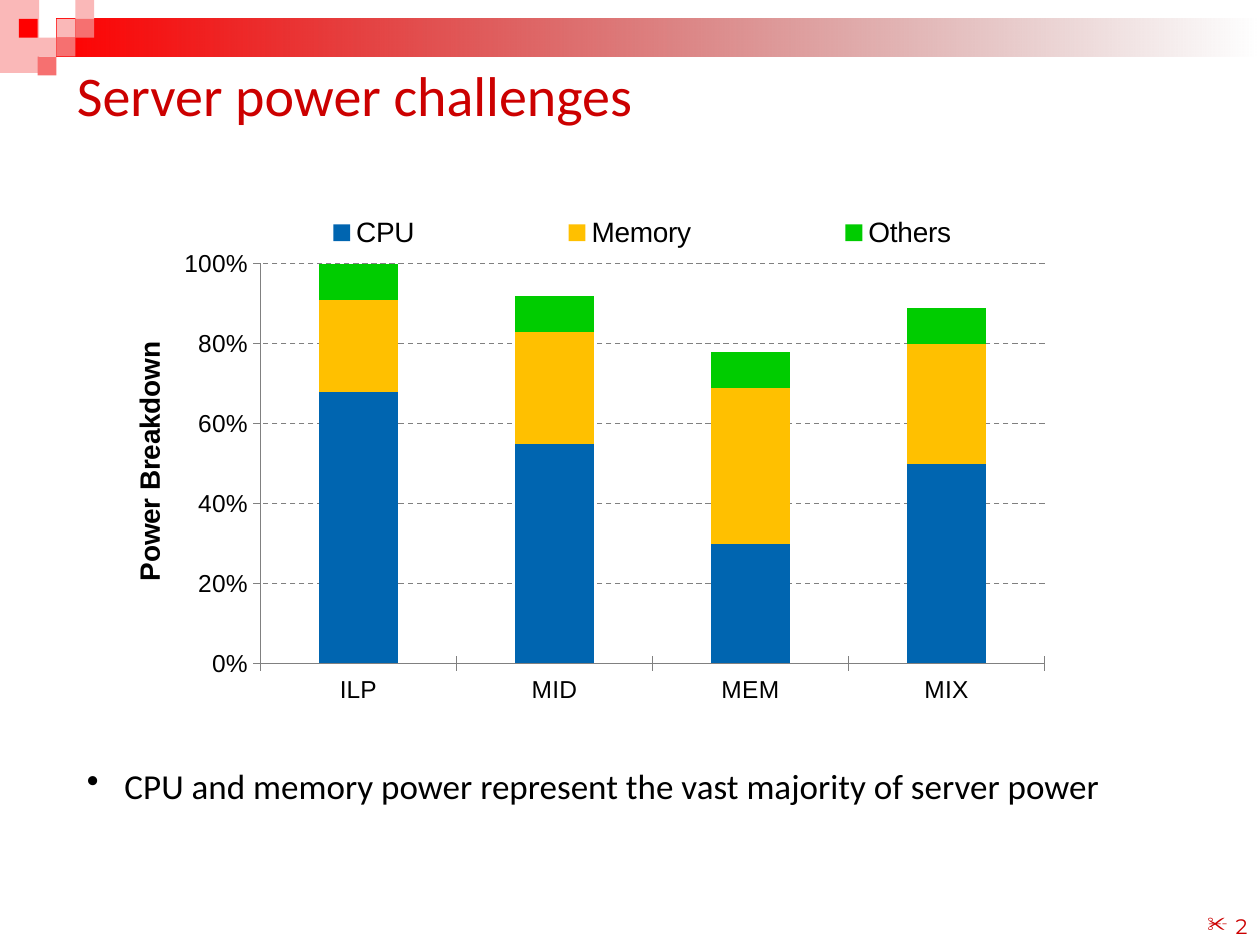
from lxml.etree import SubElement
from pptx import Presentation
from pptx.chart.data import CategoryChartData
from pptx.dml.color import RGBColor
from pptx.enum.chart import XL_CHART_TYPE, XL_LEGEND_POSITION, XL_TICK_MARK
from pptx.enum.dml import MSO_LINE
from pptx.enum.shapes import MSO_SHAPE
from pptx.enum.text import MSO_ANCHOR, PP_ALIGN
from pptx.oxml import parse_xml
from pptx.oxml.ns import nsdecls, qn
from pptx.util import Cm, Pt

RED = RGBColor(0xFF, 0x00, 0x00)
DARK_RED = RGBColor(0x76, 0x00, 0x00)
TITLE_RED = RGBColor(0xCC, 0x00, 0x00)
PINK = RGBColor(0xFA, 0xB8, 0xB8)
CORAL = RGBColor(0xF6, 0x70, 0x70)
BLACK = RGBColor(0x00, 0x00, 0x00)
GRAY = RGBColor(0x80, 0x80, 0x80)
BLUE = RGBColor(0x00, 0x65, 0xB0)
AMBER = RGBColor(0xFF, 0xC0, 0x00)
GREEN = RGBColor(0x00, 0xCC, 0x00)

TILE = 0.38
TILES = [
    (3, 1, PINK), (4, 0, PINK), (4, 1, CORAL), (2, 2, PINK),
    (1, 1, RED), (3, 2, CORAL), (2, 3, CORAL),
]
CATEGORIES = ["ILP", "MID", "MEM", "MIX"]
SERIES = [
    ("CPU", (0.68, 0.55, 0.3, 0.5), BLUE),
    ("Memory", (0.23, 0.28, 0.39, 0.3), AMBER),
    ("Others", (0.09, 0.09, 0.09, 0.09), GREEN),
]


def set_layout(owner, inner=False, **places):
    for old in owner.findall(qn("c:layout")):
        owner.remove(old)
    layout = parse_xml(f"<c:layout {nsdecls('c')}/>")
    manual = SubElement(layout, qn("c:manualLayout"))
    if inner:
        SubElement(manual, qn("c:layoutTarget")).set("val", "inner")
    for side in ("x", "y"):
        SubElement(manual, qn(f"c:{side}Mode")).set("val", "edge")
    for name, value in places.items():
        SubElement(manual, qn(f"c:{name}")).set("val", str(value))
    before = [owner.find(qn(tag)) for tag in ("c:legendPos", "c:tx")]
    anchor = next((item for item in before if item is not None), None)
    if anchor is None:
        owner.insert(0, layout)
    else:
        anchor.addnext(layout)


class SlideBuilder:
    def __init__(self, page):
        self.page = page
        self.text_font = "Calibri"
        self.chart_font = "Arial"

    def block(self, left, top, width, height, color):
        shape = self.page.shapes.add_shape(
            MSO_SHAPE.RECTANGLE, Cm(left), Cm(top), Cm(width), Cm(height))
        shape.shadow.inherit = False
        shape.line.fill.background()
        shape.fill.solid()
        shape.fill.fore_color.rgb = color
        return shape

    def fading_bar(self, left, top, width, height, start, end):
        fill = self.block(left, top, width, height, start).fill
        fill.gradient()
        fill.gradient_angle = 0
        for stop, color, position in zip(fill.gradient_stops, (start, end), (0, 1)):
            stop.color.rgb = color
            stop.position = position
        last_color = self.page.shapes[-1].element.spPr.findall(".//" + qn("a:srgbClr"))[-1]
        SubElement(last_color, qn("a:alpha")).set("val", "0")

    def text(self, left, top, width, height, words, size, color, font=None,
             anchor=MSO_ANCHOR.TOP, align=PP_ALIGN.LEFT, bullet=None,
             indent=0, spacing=None):
        box = self.page.shapes.add_textbox(Cm(left), Cm(top), Cm(width), Cm(height))
        frame = box.text_frame
        frame.word_wrap = True
        frame.vertical_anchor = anchor
        para = frame.paragraphs[0]
        para.text = words
        para.alignment = align
        if spacing:
            para.line_spacing = spacing
        if bullet:
            properties = para._p.get_or_add_pPr()
            properties.set("marL", str(Cm(indent)))
            properties.set("indent", str(-Cm(indent)))
            SubElement(properties, qn("a:buChar")).set("char", bullet)
        para.font.name = font or self.text_font
        para.font.size = Pt(size)
        para.font.color.rgb = color

    def style_font(self, font, size):
        font.name = self.chart_font
        font.size = Pt(size)
        font.color.rgb = BLACK

    def stacked_chart(self, left, top, width, height, axis_title):
        data = CategoryChartData(number_format="0%")
        data.categories = CATEGORIES
        for name, values, _ in SERIES:
            data.add_series(name, values)
        chart = self.page.shapes.add_chart(
            XL_CHART_TYPE.COLUMN_STACKED, Cm(left), Cm(top), Cm(width),
            Cm(height), data).chart
        self.style_font(chart.font, 10)
        chart.has_title = False
        plot = chart.plots[0]
        plot.gap_width = 150
        plot.overlap = 100
        plot.vary_by_categories = False
        for series, (_, _, color) in zip(plot.series, SERIES):
            series.format.fill.solid()
            series.format.fill.fore_color.rgb = color

        values = chart.value_axis
        values.minimum_scale = 0
        values.maximum_scale = 1
        values.major_unit = 0.2
        values.major_tick_mark = XL_TICK_MARK.OUTSIDE
        values.tick_labels.number_format = "0%"
        values.tick_labels.number_format_is_linked = False
        grid = values.major_gridlines.format.line
        grid.color.rgb = GRAY
        grid.width = Pt(0.75)
        grid.dash_style = MSO_LINE.DASH
        title = values.axis_title
        title.text_frame.text = axis_title
        title_font = title.text_frame.paragraphs[0].font
        self.style_font(title_font, 16)
        title_font.bold = True
        set_layout(title._element, x=0.06, y=0.27)

        chart.category_axis.major_tick_mark = XL_TICK_MARK.CROSS
        for axis in (values, chart.category_axis):
            axis.format.line.color.rgb = GRAY
            axis.format.line.width = Pt(0.75)
            self.style_font(axis.tick_labels.font, 14)

        chart.has_legend = True
        legend = chart.legend
        legend.position = XL_LEGEND_POSITION.TOP
        legend.include_in_layout = False
        self.style_font(legend.font, 16)
        set_layout(legend._element, x=0.12, y=0.05, w=0.88, h=0.07)
        plot_area = chart._chartSpace.chart.plotArea
        set_layout(plot_area, inner=True, x=0.19, y=0.14, w=0.76, h=0.71)


def main():
    deck = Presentation()
    deck.slide_width = Cm(25.4)
    deck.slide_height = Cm(19.05)
    builder = SlideBuilder(deck.slides.add_slide(deck.slide_layouts[6]))

    builder.block(0, 0, 0.79, 1.47, PINK)
    builder.fading_bar(3 * TILE, TILE, 24.26, 2 * TILE, RED, DARK_RED)
    for column, row, color in TILES:
        builder.block(column * TILE, row * TILE, TILE, TILE, color)

    builder.text(19.48, 17.78, 5.92, 1.27, "2", 12, TITLE_RED,
                 font="Montserrat", anchor=MSO_ANCHOR.BOTTOM,
                 align=PP_ALIGN.RIGHT, bullet="✂", indent=0.57)
    builder.text(1.3, 1.12, 22.86, 1.55, "Server power challenges", 32,
                 TITLE_RED, anchor=MSO_ANCHOR.MIDDLE)
    builder.text(1.5, 15.11, 23.9, 2.31,
                 "CPU and memory power represent the vast majority of server power",
                 20, BLACK, bullet="•", indent=0.76, spacing=1.2)
    builder.stacked_chart(1.3, 3.73, 20.8, 11.35, "Power Breakdown")
    deck.save("out.pptx")


if __name__ == "__main__":
    main()
